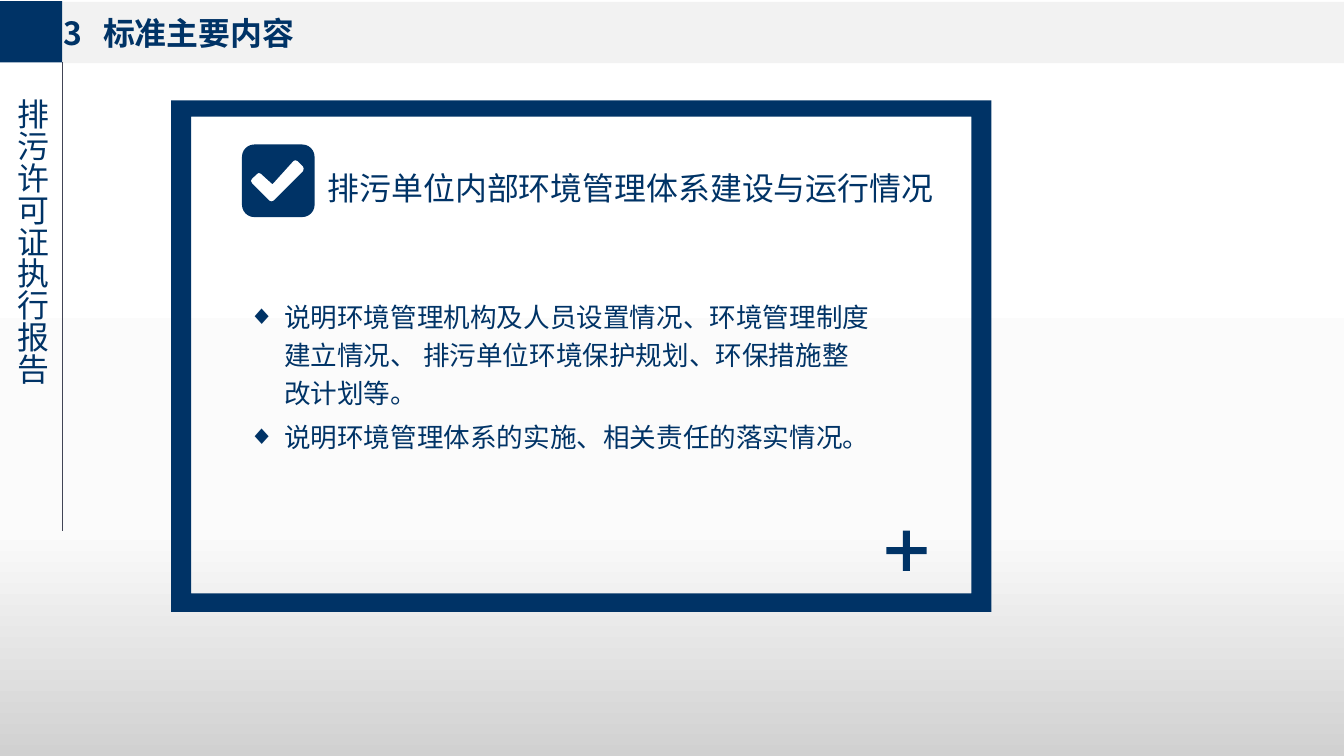
from copy import deepcopy
from dataclasses import dataclass

from lxml import etree
from pptx import Presentation
from pptx import util as u
from pptx.dml.color import RGBColor
from pptx.enum import shapes, text
from pptx.oxml.ns import qn

COLOURS = {
    "navy": "003366",
    "band": "F2F2F2",
    "rule": "414455",
    "white": "FFFFFF",
}
BACKGROUND_STOPS = [(14, "FFFFFF"), (70, "FBFBFB"), (100, "D1D1D1")]
SANS = "Noto Sans CJK SC"
CONDENSED = "Roboto Condensed"


@dataclass
class Box:
    left: float
    top: float
    width: float
    height: float

    def lengths(self) -> list:
        return [u.Cm(n) for n in (self.left, self.top, self.width, self.height)]

    def corners(self) -> list:
        right, bottom = self.left + self.width, self.top + self.height
        return [(self.left, self.top), (right, self.top),
                (right, bottom), (self.left, bottom)]


@dataclass
class Preset:
    kind: shapes.MSO_SHAPE
    box: Box
    colour: str
    adjustment: float | None = None


@dataclass
class TextStyle:
    size: float
    font: str = SANS
    bold: bool = False
    line_spacing: float = 1.0


PRESETS = [
    Preset(shapes.MSO_SHAPE.RECTANGLE, Box(1.65, 0.05, 34.06, 1.63), "band"),
    Preset(shapes.MSO_SHAPE.RECTANGLE, Box(0, 0.03, 1.65, 1.63), "navy"),
    Preset(shapes.MSO_SHAPE.ROUNDED_RECTANGLE, Box(6.43, 3.84, 1.93, 1.93), "navy", 0.17),
    Preset(shapes.MSO_SHAPE.CROSS, Box(23.55, 14.1, 1.07, 1.07), "navy", 0.414),
]
FRAME_OUTER = Box(4.55, 2.67, 21.79, 13.59)
FRAME_INNER = Box(5.08, 3.1, 20.73, 12.67)
CHECK_MARK = [(8.05, 4.55), (8.07, 4.48), (8.05, 4.43), (7.9, 4.28), (7.85, 4.26),
              (7.8, 4.28), (7.24, 4.9), (6.93, 4.62), (6.88, 4.6), (6.84, 4.62),
              (6.7, 4.75), (6.67, 4.81), (6.7, 4.87), (7.16, 5.33), (7.21, 5.35),
              (7.27, 5.33)]
BULLETS = [
    "说明环境管理机构及人员设置情况、环境管理制度建立情况、 排污单位环境保护规划、环保措施整改计划等。",
    "说明环境管理体系的实施、相关责任的落实情况。",
]


def paint(shape, colour: str) -> None:
    shape.shadow.inherit = False
    shape.fill.solid()
    shape.fill.fore_color.rgb = RGBColor.from_string(COLOURS[colour])
    shape.line.fill.background()


def set_background(slide) -> None:
    fill = slide.background.fill
    fill.gradient()
    fill.gradient_angle = 270
    stop_list = slide.element.find(".//" + qn("a:gsLst"))
    stop_list.append(deepcopy(stop_list[-1]))
    for stop, (position, colour) in zip(fill.gradient_stops, BACKGROUND_STOPS):
        stop.position = position / 100
        stop.color.rgb = RGBColor.from_string(colour)


def add_preset(slide, preset: Preset) -> None:
    shape = slide.shapes.add_shape(preset.kind, *preset.box.lengths())
    if preset.adjustment is not None:
        shape.adjustments[0] = preset.adjustment
    paint(shape, preset.colour)


def add_outline(slide, contours: list, colour: str) -> None:
    scaled = [[(u.Cm(x), u.Cm(y)) for x, y in contour] for contour in contours]
    builder = slide.shapes.build_freeform(*scaled[0][0], scale=1.0)
    for index, contour in enumerate(scaled):
        if index:
            builder.move_to(*contour[0])
        builder.add_line_segments(contour[1:], close=True)
    paint(builder.convert_to_shape(), colour)


def add_rule(slide) -> None:
    rule = slide.shapes.add_connector(
        shapes.MSO_CONNECTOR.STRAIGHT, u.Cm(1.65), u.Cm(14.1), u.Cm(1.65), u.Cm(1.65))
    rule.line.color.rgb = RGBColor.from_string(COLOURS["rule"])
    rule.line.width = u.Pt(0.25)
    etree.SubElement(rule.element.spPr, qn("a:effectLst"))


def place(shape, box: Box, anchor: text.MSO_ANCHOR, inset: tuple = (0, 0)):
    shape.left, shape.top, shape.width, shape.height = box.lengths()
    frame = shape.text_frame
    frame.word_wrap = True
    frame.auto_size = text.MSO_AUTO_SIZE.NONE
    frame.vertical_anchor = anchor
    frame.margin_left = frame.margin_right = u.Cm(inset[0])
    frame.margin_top = frame.margin_bottom = u.Cm(inset[1])
    return frame


def write(paragraph, content: str, style: TextStyle) -> None:
    paragraph.alignment = text.PP_ALIGN.LEFT
    paragraph.line_spacing = style.line_spacing
    run = paragraph.add_run()
    run.text = content
    run.font.name = style.font
    run.font.size = u.Pt(style.size)
    run.font.bold = style.bold
    run.font.color.rgb = RGBColor.from_string(COLOURS["navy"])
    east_asian = etree.SubElement(run.font._element, qn("a:ea"))
    east_asian.set("typeface", style.font)


def add_bullet(paragraph) -> None:
    paragraph.space_before = u.Pt(4)
    properties = paragraph._p.get_or_add_pPr()
    properties.set("marL", str(u.Cm(0.95)))
    properties.set("indent", str(-u.Cm(0.95)))
    etree.SubElement(properties, qn("a:buChar")).set("char", "◆")


def fill_title(slide) -> None:
    title = slide.shapes.title
    title.element.getparent().append(title.element)
    frame = place(title, Box(1.7, 0.36, 6.6, 1.04), text.MSO_ANCHOR.TOP)
    paragraph = frame.paragraphs[0]
    write(paragraph, "3\t标准主要内容", TextStyle(24, bold=True))
    tabs = etree.SubElement(paragraph._p.get_or_add_pPr(), qn("a:tabLst"))
    etree.SubElement(tabs, qn("a:tab"), pos=str(u.Cm(1.04)), algn="l")


def fill_body(slide) -> None:
    body = slide.placeholders[1]
    body.element.getparent().append(body.element)
    frame = place(body, Box(6.35, 6.45, 17.12, 6.96), text.MSO_ANCHOR.MIDDLE, (0.25, 0.13))
    for index, content in enumerate(BULLETS):
        paragraph = frame.add_paragraph() if index else frame.paragraphs[0]
        write(paragraph, content, TextStyle(20, line_spacing=1.2))
        add_bullet(paragraph)


def add_label(slide, content: str, box: Box, style: TextStyle, inset: tuple = (0, 0)):
    label = slide.shapes.add_textbox(*box.lengths())
    frame = place(label, box, text.MSO_ANCHOR.TOP, inset)
    write(frame.paragraphs[0], content, style)
    return frame


def main() -> None:
    presentation = Presentation()
    presentation.slide_width, presentation.slide_height = u.Cm(35.71), u.Cm(20.09)
    slide = presentation.slides.add_slide(presentation.slide_layouts[1])
    set_background(slide)

    # Header, icon tile and plus sign
    for preset in PRESETS:
        add_preset(slide, preset)
    fill_title(slide)

    # Vertical section name and its rule
    section = add_label(slide, "排污许可证执行报告", Box(0.36, 2.62, 1.02, 13.61), TextStyle(24))
    section._txBody.bodyPr.set("vert", "eaVert")
    add_rule(slide)

    # Framed content: the inner contour runs backwards to cut the opening
    add_outline(slide, [FRAME_OUTER.corners(), FRAME_INNER.corners()[::-1]], "navy")
    add_outline(slide, [CHECK_MARK], "white")
    add_label(slide, "排污单位内部环境管理体系建设与运行情况", Box(8.46, 3.84, 16.94, 1.8),
              TextStyle(24, CONDENSED, line_spacing=1.5), (0.25, 0.13))
    fill_body(slide)

    presentation.save("out.pptx")


if __name__ == "__main__":
    main()
